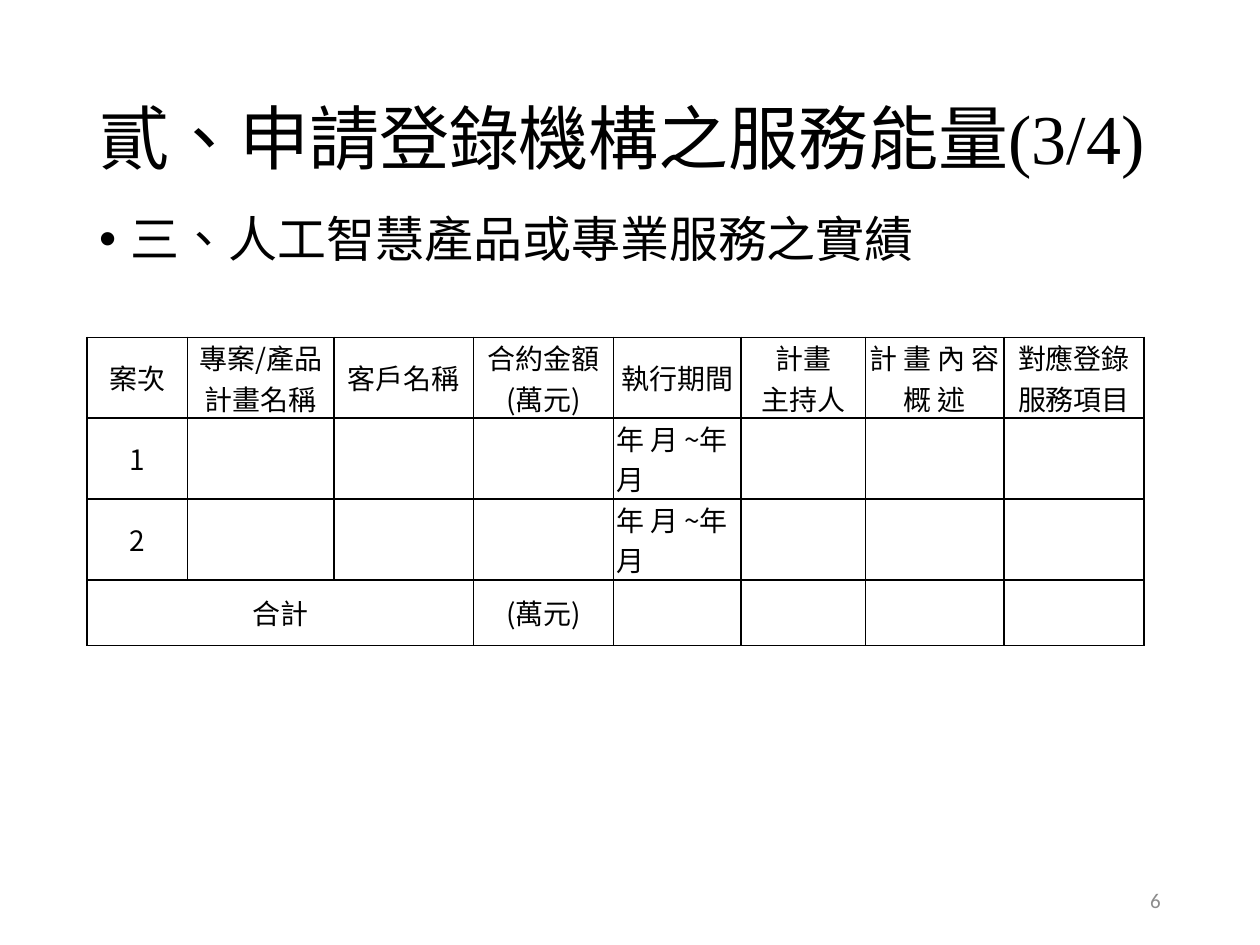
"""Build the slide listing an applicant's AI product and service track record."""
from lxml.etree import SubElement
from pptx import Presentation
from pptx.dml.color import RGBColor
from pptx.enum.text import MSO_ANCHOR as Anchor, MSO_AUTO_SIZE as AutoSize, PP_ALIGN as Align
from pptx.oxml import parse_xml
from pptx.oxml.ns import nsdecls, qn
from pptx.util import Cm, Pt

BLACK = RGBColor(0x00, 0x00, 0x00)
GREY = RGBColor(0x8C, 0x8C, 0x8C)
SERIF, SANS, CJK = "Times New Roman", "Calibri", "Noto Sans CJK SC"


def set_attributes(target, values):
    for name, value in values.items():
        setattr(target, name, value)


def write_text(frame, text, font_name, size, color, paragraph_format):
    frame.text = text
    for paragraph in frame.paragraphs:
        set_attributes(paragraph, paragraph_format)
        for run in paragraph.runs:
            set_attributes(run.font, {"name": font_name, "size": Pt(size)})
            run.font.color.rgb = color
            run.font._element.set("lang", "zh-TW")
            SubElement(run.font._element, qn("a:ea")).set("typeface", CJK)


presentation = Presentation()
set_attributes(presentation, {"slide_width": Cm(25.4), "slide_height": Cm(19.05)})
slide = presentation.slides.add_slide(presentation.slide_layouts[5])

title = slide.shapes.title
set_attributes(title, {"left": Cm(1.75), "top": Cm(1.01), "width": Cm(21.9), "height": Cm(3.68)})
set_attributes(title.text_frame, {
    "word_wrap": True, "auto_size": AutoSize.NONE, "vertical_anchor": Anchor.MIDDLE})
write_text(title.text_frame, "貳、申請登錄機構之服務能量(3/4)", SERIF, 40, BLACK,
           {"alignment": Align.LEFT, "line_spacing": 0.9})

body = slide.shapes.add_textbox(Cm(1.75), Cm(4.22), Cm(21.9), Cm(12.09))
body.text_frame.word_wrap = True
write_text(body.text_frame, "三、人工智慧產品或專業服務之實績", SERIF, 28, BLACK,
           {"alignment": Align.LEFT, "line_spacing": 0.9, "space_before": Pt(10)})
bullet_properties = body.text_frame.paragraphs[0]._p.get_or_add_pPr()
bullet_properties.set("marL", str(Cm(0.64)))
bullet_properties.set("indent", str(Cm(-0.64)))
SubElement(bullet_properties, qn("a:buFont")).set("typeface", "Arial")
SubElement(bullet_properties, qn("a:buChar")).set("char", "•")

slide_number = slide.shapes.add_textbox(Cm(17.93), Cm(17.65), Cm(5.72), Cm(1.01))
set_attributes(slide_number.text_frame, {"word_wrap": True, "vertical_anchor": Anchor.MIDDLE})
write_text(slide_number.text_frame, "6", SANS, 12, GREY, {"alignment": Align.RIGHT})

PERIOD = "年 月 ~年 月"
PERIOD_COLUMN = 4
ROWS = [
    ["案次", "專案/產品計畫名稱", "客戶名稱", "合約金額\n(萬元)", "執行期間",
     "計畫\n主持人", "計 畫 內 容 概 述", "對應登錄服務項目"],
    ["1", "", "", "", PERIOD, "", "", ""],
    ["2", "", "", "", PERIOD, "", "", ""],
    ["合計", "", "", "(萬元)", "", "", "", ""],
]
COLUMN_WIDTHS = [2.03, 2.95, 2.82, 2.82, 2.57, 2.51, 2.79, 2.82]
ROW_HEIGHTS = [1.63, 1.63, 1.63, 1.32]
CELL_FORMAT = {"margin_left": Cm(0.05), "margin_right": Cm(0.05), "margin_top": 0,
               "margin_bottom": 0, "vertical_anchor": Anchor.MIDDLE}

table = slide.shapes.add_table(len(ROWS), len(COLUMN_WIDTHS), Cm(1.75), Cm(6.8),
                               Cm(sum(COLUMN_WIDTHS)), Cm(sum(ROW_HEIGHTS))).table
set_attributes(table, {"first_row": False, "horz_banding": False})
for column, width in zip(table.columns, COLUMN_WIDTHS):
    column.width = Cm(width)
for row, height in zip(table.rows, ROW_HEIGHTS):
    row.height = Cm(height)

for row_index, texts in enumerate(ROWS):
    for column_index, text in enumerate(texts):
        cell = table.cell(row_index, column_index)
        set_attributes(cell, CELL_FORMAT)
        is_period = row_index > 0 and column_index == PERIOD_COLUMN
        write_text(cell.text_frame, text, CJK, 16, BLACK,
                   {"alignment": Align.LEFT if is_period else Align.CENTER})
        cell.fill.background()
        cell_properties = cell._tc.get_or_add_tcPr()
        for position, side in enumerate(["lnL", "lnR", "lnT", "lnB"]):
            cell_properties.insert(position, parse_xml(
                f'<a:{side} {nsdecls("a")} w="{Pt(1)}"><a:solidFill>'
                f'<a:srgbClr val="{BLACK}"/></a:solidFill></a:{side}>'))
table.cell(3, 0).merge(table.cell(3, 2))

presentation.save("out.pptx")
